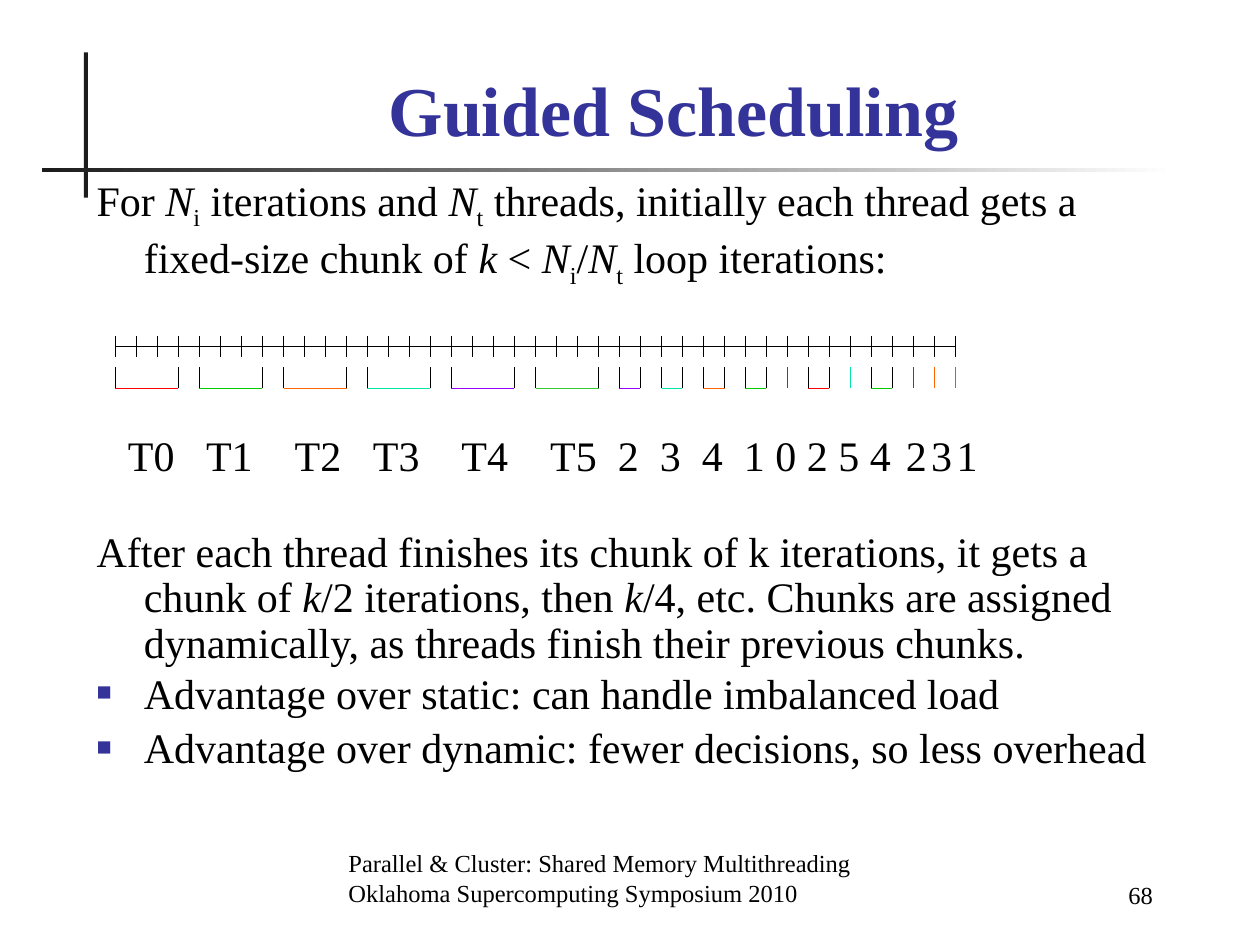
from dataclasses import dataclass

from lxml.etree import SubElement
from pptx import Presentation
from pptx.dml.color import RGBColor as RGB
from pptx.enum.shapes import MSO_CONNECTOR as CONNECTOR, MSO_SHAPE as SHAPE
from pptx.enum.text import MSO_ANCHOR as ANCHOR, MSO_AUTO_SIZE as AUTO_SIZE, PP_ALIGN as ALIGN
from pptx.oxml.ns import qn
from pptx.util import Pt


@dataclass(frozen=True)
class Theme:
    font: str = "Times New Roman"
    title_size: int = 40
    body_size: int = 24
    footer_size: int = 14
    text: str = "000000"
    accent: str = "333399"
    bar: str = "1C1C1C"
    paper: str = "FFFFFF"
    red: str = "FF0000"
    green: str = "00CC00"
    light_green: str = "33CC33"
    orange: str = "FF6600"
    teal: str = "00E4A8"
    purple: str = "9900FF"


THEME = Theme()
HANGING = 27
PARAGRAPH_GAP = 5.5
DIAGRAM_GAP = 138.4

# Iteration axis: one tick per loop iteration
AXIS_LEFT, STEP, TICKS = 66, 12, 41
TICK_TOP, AXIS_Y, TICK_BOTTOM = 192, 198, 204
CHUNK_TOP, CHUNK_BOTTOM = 210, 222

# Chunks in axis order: (steps spanned, colour)
CHUNKS = [
    (3, THEME.red), (3, THEME.green), (3, THEME.orange),
    (3, THEME.teal), (3, THEME.purple), (3, THEME.light_green),
    (1, THEME.purple), (1, THEME.teal), (1, THEME.orange), (1, THEME.green),
    (0, THEME.purple), (1, THEME.red), (0, THEME.teal), (1, THEME.green),
    (0, THEME.red), (0, THEME.orange), (0, THEME.green),
]

# Thread that takes each chunk: (tab position, label)
THREADS = [
    (18, "T0"), (62.7, "T1"), (113.3, "T2"), (158, "T3"), (208.6, "T4"), (259.3, "T5"),
    (298, "2"), (322, "3"), (346, "4"), (370, "1"), (388, "0"), (406, "2"),
    (424, "5"), (442, "4"), (462.5, "2"), (477, "3"), (491.5, "1"),
]

N_I = [("N", "italic"), ("i", "sub")]
N_T = [("N", "italic"), ("t", "sub")]
INTRO = [
    ("For ", ""), *N_I, (" iterations and ", ""), *N_T,
    (" threads, initially each thread gets a fixed-size chunk of ", ""),
    ("k ", "italic"), ("< ", ""), *N_I, ("/", ""), *N_T, (" loop iterations:", ""),
]
EXPLANATION = [
    ("After each thread finishes its chunk of k iterations, it gets a chunk of ", ""),
    ("k", "italic"), ("/2 iterations, then ", ""), ("k", "italic"),
    ("/4, etc. Chunks are assigned dynamically, as threads finish their previous chunks.", ""),
]


class SlideBuilder:
    def __init__(self, slide, theme):
        self.slide = slide
        self.theme = theme

    def set_font(self, paragraph, size, color=None, bold=False):
        font = paragraph.font
        font.name, font.size, font.bold = self.theme.font, Pt(size), bold
        font.color.rgb = RGB.from_string(color or self.theme.text)

    def bar(self, left, top, width, height, fade=False):
        shape = self.slide.shapes.add_shape(
            SHAPE.RECTANGLE, Pt(left), Pt(top), Pt(width), Pt(height))
        shape.shadow.inherit = False
        shape.line.fill.background()
        if fade:
            shape.fill.gradient()
            shape.fill.gradient_angle = 0
            for stop, color in zip(shape.fill.gradient_stops, (self.theme.bar, self.theme.paper)):
                stop.color.rgb = RGB.from_string(color)
        else:
            shape.fill.solid()
            shape.fill.fore_color.rgb = RGB.from_string(self.theme.bar)

    def line(self, x1, y1, x2, y2, color=None):
        connector = self.slide.shapes.add_connector(
            CONNECTOR.STRAIGHT, Pt(x1), Pt(y1), Pt(x2), Pt(y2))
        connector.line.width = Pt(0.75)
        connector.line.color.rgb = RGB.from_string(color or self.theme.text)
        SubElement(connector._element.spPr, qn("a:effectLst"))

    def place(self, shape, left, top, width, height, anchor):
        shape.left, shape.top, shape.width, shape.height = map(Pt, (left, top, width, height))
        frame = shape.text_frame
        frame.word_wrap, frame.auto_size = True, AUTO_SIZE.NONE
        frame.vertical_anchor = anchor
        return frame

    def text_box(self, *box, anchor):
        return self.place(self.slide.shapes.add_textbox(*map(Pt, box)), *box, anchor)

    def title(self, text, *box):
        frame = self.place(self.slide.shapes.title, *box, ANCHOR.BOTTOM)
        frame.text = text
        paragraph = frame.paragraphs[0]
        paragraph.alignment = ALIGN.CENTER
        self.set_font(paragraph, self.theme.title_size, self.theme.accent, bold=True)

    def footer(self, lines, *box, align=ALIGN.LEFT):
        frame = self.text_box(*box, anchor=ANCHOR.BOTTOM)
        frame.text = "\n".join(lines)
        for paragraph in frame.paragraphs:
            paragraph.alignment = align
            self.set_font(paragraph, self.theme.footer_size)

    def body(self, *box):
        return self.place(self.slide.placeholders[1], *box, ANCHOR.TOP)

    def body_paragraph(self, paragraph, runs, spacing=1.0, before=PARAGRAPH_GAP, bullet=False):
        paragraph.line_spacing, paragraph.space_before = spacing, Pt(before)
        properties = paragraph._p.get_or_add_pPr()
        properties.set("marL", str(Pt(HANGING)))
        properties.set("indent", str(-Pt(HANGING)))
        if bullet:
            color = SubElement(properties, qn("a:buClr"))
            SubElement(color, qn("a:srgbClr"), val=self.theme.accent)
            SubElement(properties, qn("a:buSzPct"), val="60000")
            SubElement(properties, qn("a:buChar"), char="■")
        else:
            SubElement(properties, qn("a:buNone"))
        self.set_font(paragraph, self.theme.body_size)
        for text, style in runs:
            run = paragraph.add_run()
            run.text = text
            if style == "italic":
                run.font.italic = True
            elif style == "sub":
                run._r.get_or_add_rPr().set("baseline", "-25000")

    def tabbed_row(self, labels, *box):
        """Write (position, label) pairs on one line, each at its own tab stop."""
        frame = self.text_box(*box, anchor=ANCHOR.TOP)
        frame.margin_top = 0
        paragraph = frame.paragraphs[0]
        tab_list = SubElement(paragraph._p.get_or_add_pPr(), qn("a:tabLst"))
        for position, _ in labels:
            SubElement(tab_list, qn("a:tab"), pos=str(Pt(position)), algn="l")
        self.set_font(paragraph, self.theme.body_size)
        paragraph.add_run().text = "".join(f"\t{label}" for _, label in labels)

    def axis(self):
        self.line(AXIS_LEFT, AXIS_Y, AXIS_LEFT + (TICKS - 1) * STEP, AXIS_Y)
        for tick in range(TICKS):
            x = AXIS_LEFT + tick * STEP
            self.line(x, TICK_TOP, x, TICK_BOTTOM)

    def chunks(self):
        """Draw a bracket per chunk, or one coloured stroke for a single iteration."""
        left = AXIS_LEFT
        for steps, color in CHUNKS:
            right = left + steps * STEP
            if steps:
                self.line(left, CHUNK_BOTTOM, right, CHUNK_BOTTOM, color)
                for x in (left, right):
                    self.line(x, CHUNK_BOTTOM, x, CHUNK_TOP)
            else:
                self.line(left, CHUNK_TOP, left, CHUNK_BOTTOM, color)
            left = right + STEP


def main():
    presentation = Presentation()
    presentation.slide_width, presentation.slide_height = Pt(720), Pt(540)
    slide = presentation.slides.add_slide(presentation.slide_layouts[1])
    builder = SlideBuilder(slide, THEME)

    builder.bar(48, 30, 2.25, 83)
    builder.bar(24, 96, 648, 2.25, fade=True)
    builder.footer(["Parallel & Cluster: Shared Memory Multithreading",
                    "Oklahoma Supercomputing Symposium 2010"], 192, 486, 315, 36)
    builder.footer(["68"], 564, 487.5, 102, 36, align=ALIGN.RIGHT)
    builder.title("Guided Scheduling", 78, 36, 613.5, 53.5)

    frame = builder.body(48, 96, 624, 366)
    builder.body_paragraph(frame.paragraphs[0], INTRO, before=0)
    builder.body_paragraph(frame.add_paragraph(), EXPLANATION, spacing=0.9, before=DIAGRAM_GAP)
    for text, spacing in (
        ("Advantage over static: can handle imbalanced load", 0.8),
        ("Advantage over dynamic: fewer decisions, so less overhead", 0.9),
    ):
        builder.body_paragraph(frame.add_paragraph(), [(text, "")], spacing, bullet=True)

    builder.axis()
    builder.chunks()
    builder.tabbed_row(THREADS, 48, 245.5, 624, 30)
    presentation.save("out.pptx")


if __name__ == "__main__":
    main()
